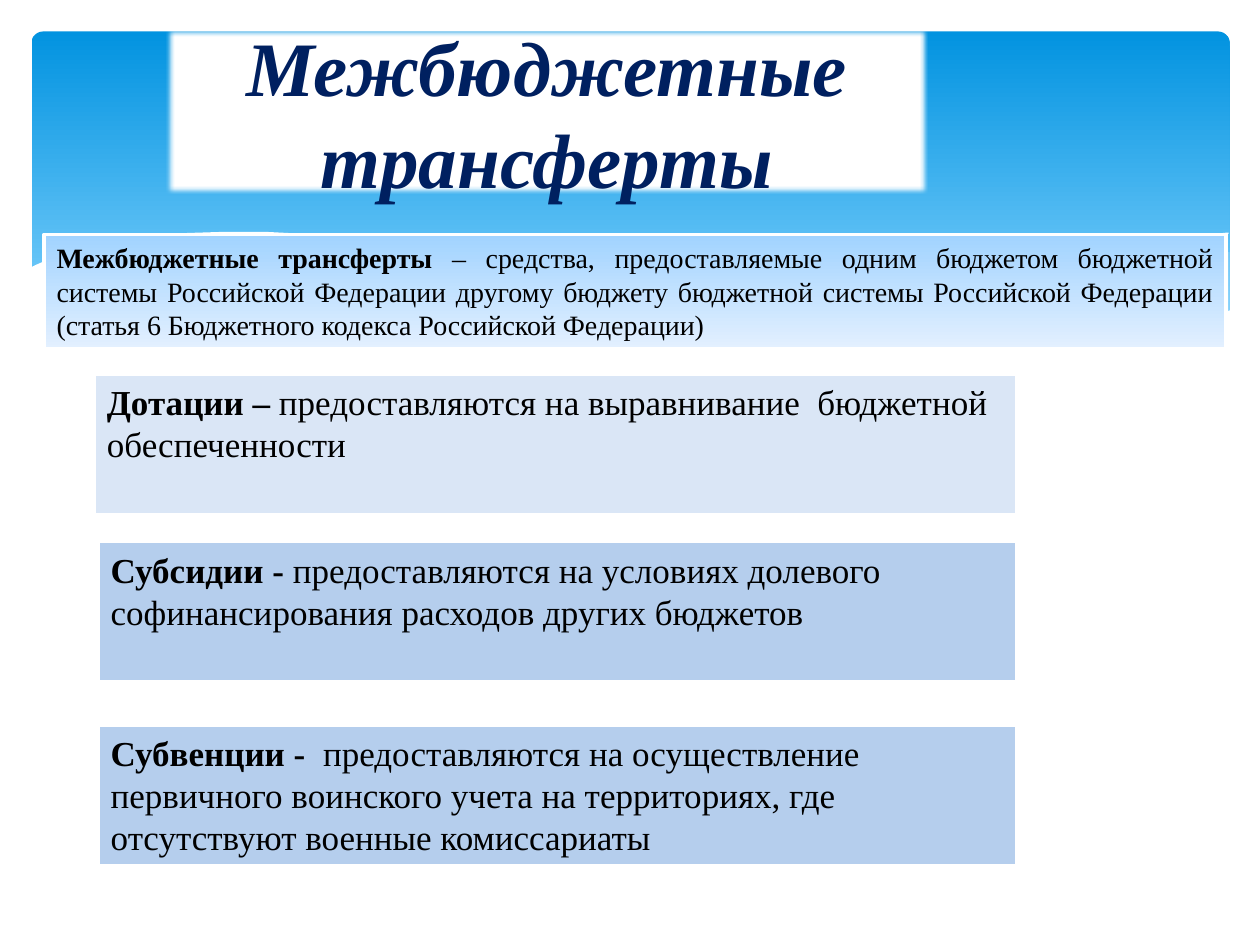
from lxml.etree import SubElement
from pptx import Presentation
from pptx.dml.color import RGBColor
from pptx.enum.shapes import MSO_SHAPE as Shape
from pptx.enum.text import MSO_ANCHOR as Anchor, MSO_AUTO_SIZE as AutoSize, PP_ALIGN as Align
from pptx.oxml.ns import qn
from pptx.util import Inches, Pt

FONT = "Times New Roman"
COLORS = {
    "banner_top": "0293E0", "banner_bottom": "83D3FE", "wave": "C6E7FC",
    "white": "FFFFFF", "title": "002060", "text": "000000",
    "definition_top": "A1D3FF", "definition_bottom": "E3F0FF",
    "grants": "DAE6F6", "transfers": "B5CEED",
}

TITLE = "Межбюджетные трансферты"
DEFINITION = (
    "Межбюджетные трансферты ",
    "– средства, предоставляемые одним бюджетом бюджетной системы Российской Федерации "
    "другому бюджету бюджетной системы Российской Федерации "
    "(статья 6 Бюджетного кодекса Российской Федерации)",
)
TRANSFERS = [
    (0.75, 2.97, "grants", "Дотации – ",
     "предоставляются на выравнивание  бюджетной обеспеченности"),
    (0.78, 4.3, "transfers", "Субсидии - ",
     "предоставляются на условиях долевого софинансирования расходов других бюджетов"),
    (0.78, 5.76, "transfers", "Субвенции -  ",
     "предоставляются на осуществление первичного воинского учета на территориях, "
     "где отсутствуют военные комиссариаты"),
]
TRANSFERS_RIGHT, TRANSFER_HEIGHT = 8.07, 1.11

PALE_WAVES = [
    (29, [(9.76, 2), (9.48, 2.04), (9.06, 2.13), (8.61, 2.23), (8.05, 2.37), (7.53, 2.48),
          (7.06, 2.57), (6.61, 2.65), (7.05, 2.71), (7.45, 2.75), (7.81, 2.77), (8.14, 2.78),
          (8.54, 2.76), (8.89, 2.72), (9.21, 2.65), (9.49, 2.57), (9.76, 2.47)]),
    (40, [(8.93, 2.73), (8.37, 2.65), (7.75, 2.54), (7.06, 2.4), (6.29, 2.22), (5.84, 2.11),
          (5.41, 2.03), (5.02, 1.96), (4.65, 1.91), (4.2, 1.87), (3.8, 1.85), (3.44, 1.86),
          (2.86, 1.91), (3.42, 1.99), (4.04, 2.11), (4.91, 2.32), (5.66, 2.48), (6.34, 2.61),
          (6.95, 2.7), (7.48, 2.76), (7.96, 2.78), (8.38, 2.78), (8.93, 2.73)]),
]
WAVE_LINES = [
    [(3.09, 1.95), (3.28, 1.92), (3.63, 1.89), (4.01, 1.87), (4.5, 1.88), (5.1, 1.92),
     (5.82, 2), (6.65, 2.13), (7.6, 2.33), (8.31, 2.51), (9.07, 2.72)],
    [(6.13, 2.57), (6.72, 2.41), (7.48, 2.23), (8.06, 2.1), (8.66, 1.99), (9.24, 1.9),
     (9.75, 1.85)],
]
WHITE_WAVE = [
    (9.77, 2.46), (9.5, 2.56), (9.2, 2.65), (8.87, 2.71), (8.5, 2.75), (8.09, 2.77),
    (7.61, 2.75), (7.08, 2.7), (6.48, 2.62), (5.79, 2.5), (5.03, 2.33), (4.47, 2.2),
    (3.91, 2.07), (3.4, 1.97), (2.92, 1.9), (2.5, 1.86), (2.11, 1.84), (1.77, 1.84),
    (1.46, 1.85), (1.19, 1.87), (0.95, 1.91), (0.76, 1.95), (0.59, 1.99), (0.46, 2.03),
    (0.36, 2.07), (0.29, 2.1), (0.23, 2.13), (0.23, 3.29), (9.77, 3.29),
]


def rgb(name):
    return RGBColor.from_string(COLORS[name])


def fill_solid(shape, name):
    shape.fill.solid()
    shape.fill.fore_color.rgb = rgb(name)


def fill_gradient(shape, names, end=1):
    shape.fill.gradient()
    shape.fill.gradient_angle = 270
    for stop, name, position in zip(shape.fill.gradient_stops, names, (0, end)):
        stop.color.rgb = rgb(name)
        stop.position = position


def add_wave(slide, points, closed=True):
    corners = [(Inches(x), Inches(y)) for x, y in points]
    builder = slide.shapes.build_freeform(*corners[0])
    builder.add_line_segments(corners[1:], close=closed)
    wave = builder.convert_to_shape()
    wave.shadow.inherit = False
    wave.line.fill.background()
    return wave


def add_run(paragraph, text, size, color, bold, italic=False):
    run = paragraph.add_run()
    run.text = text
    run.font.name, run.font.size = FONT, Pt(size)
    run.font.bold, run.font.italic = bold, italic
    run.font.color.rgb = rgb(color)


def add_box(slide, bounds, term, meaning, size, border, align):
    box = slide.shapes.add_shape(Shape.RECTANGLE, *map(Inches, bounds))
    box.shadow.inherit = False
    box.line.color.rgb = rgb("white")
    box.line.width = Pt(border)
    frame = box.text_frame
    frame.word_wrap = True
    frame.vertical_anchor = Anchor.TOP
    paragraph = frame.paragraphs[0]
    paragraph.alignment = align
    add_run(paragraph, term, size, "text", True)
    add_run(paragraph, meaning, size, "text", False)
    return box


def add_banner(slide):
    banner = slide.shapes.add_shape(
        Shape.ROUNDED_RECTANGLE, *map(Inches, (0.25, 0.25, 9.51, 2.7)))
    banner.adjustments[0] = 0.034
    banner.shadow.inherit = False
    banner.line.fill.background()
    fill_gradient(banner, ("banner_top", "banner_bottom"), 0.9)
    for opacity, points in PALE_WAVES:
        wave = add_wave(slide, points)
        fill_solid(wave, "wave")
        tint = wave.fill._xPr.find(qn("a:solidFill"))[0]
        SubElement(tint, qn("a:alpha"), val=str(opacity * 1000))
    for points in WAVE_LINES:
        crest = add_wave(slide, points, closed=False)
        crest.fill.background()
        crest.line.color.rgb = rgb("white")
        crest.line.width = Pt(0)
    fill_solid(add_wave(slide, WHITE_WAVE), "white")


def set_title(slide):
    title = slide.shapes.title
    slide.shapes._spTree.append(title._element)
    title.left, title.top, title.width, title.height = map(Inches, (1.32, 0.23, 6.04, 1.31))
    fill_solid(title, "white")
    effects = SubElement(title._element.spPr, qn("a:effectLst"))
    SubElement(effects, qn("a:softEdge"), rad=str(Pt(2.5)))
    frame = title.text_frame
    frame.word_wrap = True
    frame.auto_size = AutoSize.NONE
    frame.vertical_anchor = Anchor.MIDDLE
    paragraph = frame.paragraphs[0]
    paragraph.alignment = Align.CENTER
    add_run(paragraph, TITLE, 44, "title", True, True)


def main():
    deck = Presentation()
    deck.slide_width, deck.slide_height = Inches(10), Inches(7.5)
    slide = deck.slides.add_slide(deck.slide_layouts[5])
    add_banner(slide)
    set_title(slide)
    definition = add_box(slide, (0.35, 1.86, 9.38, 0.91), *DEFINITION, 16, 2, Align.JUSTIFY)
    fill_gradient(definition, ("definition_top", "definition_bottom"))
    for left, top, color, term, meaning in TRANSFERS:
        bounds = (left, top, TRANSFERS_RIGHT - left, TRANSFER_HEIGHT)
        fill_solid(add_box(slide, bounds, term, meaning, 20, 1.5, Align.LEFT), color)
    deck.save("out.pptx")


if __name__ == "__main__":
    main()
